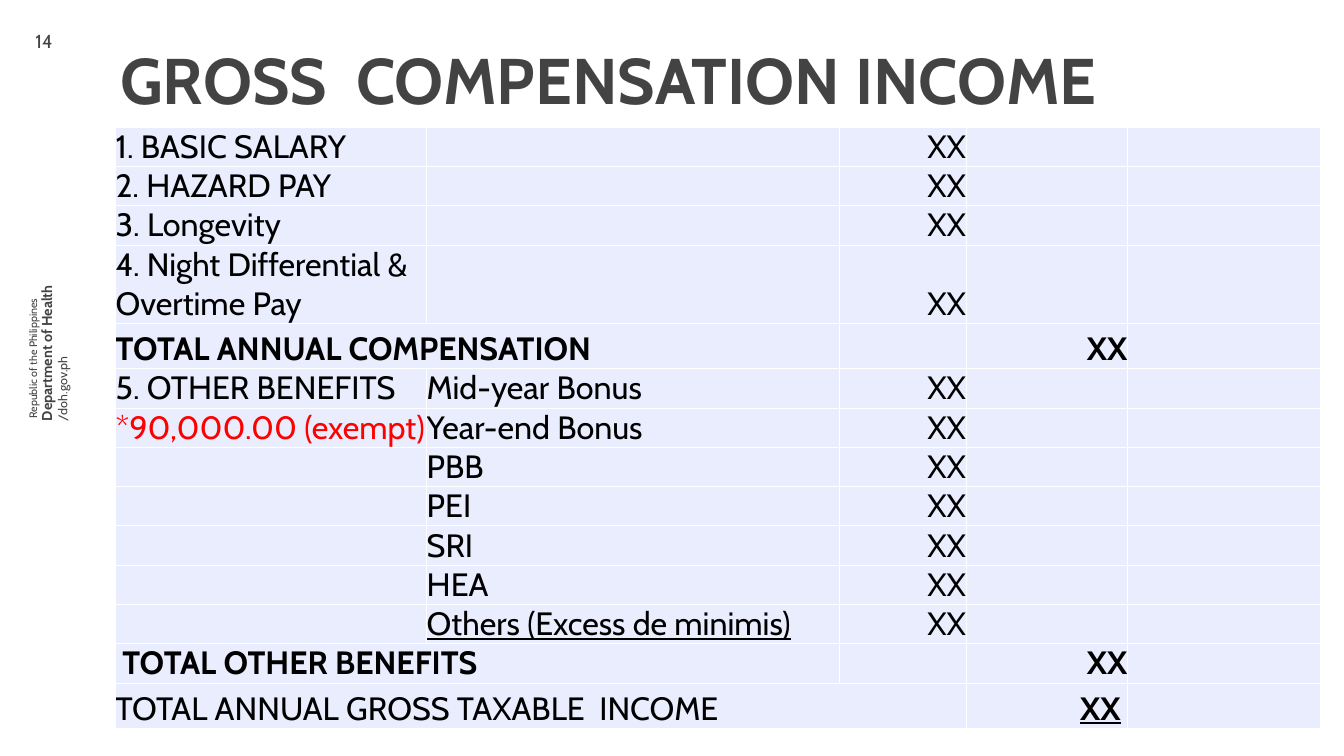
import dataclasses

import pptx
import pptx.dml.color
import pptx.enum.text
import pptx.oxml
import pptx.oxml.ns
import pptx.util

ALIGN = pptx.enum.text.PP_ALIGN
ANCHOR = pptx.enum.text.MSO_ANCHOR
SLIDE_WIDTH = pptx.util.Inches(20.83)
SLIDE_HEIGHT = pptx.util.Inches(11.72)


@dataclasses.dataclass(frozen=True)
class Theme:
    font: str = "Cabin"
    heading: str = "434343"
    body: str = "000000"
    exempt: str = "FF0000"
    cell: str = "E9EDFD"
    border: str = "FFFFFF"
    title_size: int = 72
    table_size: int = 36
    number_size: int = 21
    department_size: int = 16
    website_size: int = 14
    republic_size: int = 12


THEME = Theme()
COLUMN_SHARES = (23.15, 30.72, 9.41, 12, 14.35)
LINE_SHARE = 5.2
TOTAL_SHARE = 5.97
AMOUNT, TOTAL = 2, 3
SPACE_SHARE = 0.5
SALARY_ITEMS = ("1. BASIC SALARY", "2. HAZARD PAY", "3. Longevity",
                "4. Night Differential & Overtime Pay")
BENEFITS = ("Mid-year Bonus", "Year-end Bonus", "PBB", "PEI", "SRI", "HEA",
            "Others (Excess de minimis)")
FIRST_BENEFIT = len(SALARY_ITEMS) + 1
BENEFITS_TOTAL = FIRST_BENEFIT + len(BENEFITS)
GROSS_TOTAL = BENEFITS_TOTAL + 1


def across(percent):
    return int(SLIDE_WIDTH * percent / 100)


def down(percent):
    return int(SLIDE_HEIGHT * percent / 100)


def add_run(paragraph, text, size, color, bold=False, underline=False):
    run = paragraph.add_run()
    run.text = text
    run.font.name = THEME.font
    run.font.size = pptx.util.Pt(size)
    run.font.bold = bold
    run.font.underline = underline
    run.font.color.rgb = pptx.dml.color.RGBColor.from_string(color)


def add_text(slide, place, text, size, inset, bold=False, align=ALIGN.LEFT,
             anchor=ANCHOR.TOP, rotation=0, line_spacing=None):
    """Add a text box; place is left, top, width, height in percent of the slide."""
    left, top, width, height = place
    box = slide.shapes.add_textbox(across(left), down(top), across(width), down(height))
    box.rotation = rotation
    frame = box.text_frame
    frame.word_wrap = True
    frame.vertical_anchor = anchor
    frame.margin_left = frame.margin_right = across(inset)
    frame.margin_top = frame.margin_bottom = across(inset)
    paragraph = frame.paragraphs[0]
    paragraph.alignment = align
    if line_spacing:
        paragraph.line_spacing = line_spacing
    add_run(paragraph, text, size, THEME.heading, bold)


def style_cell(cell):
    cell.margin_left = cell.margin_right = cell.margin_top = cell.margin_bottom = 0
    cell.vertical_anchor = ANCHOR.BOTTOM
    properties = cell._tc.get_or_add_tcPr()
    for side in ("lnL", "lnR", "lnT", "lnB"):
        properties.append(pptx.oxml.parse_xml(
            f'<a:{side} {pptx.oxml.ns.nsdecls("a")} w="{pptx.util.Pt(1)}"><a:solidFill>'
            f'<a:srgbClr val="{THEME.border}"/></a:solidFill></a:{side}>'))
    cell.fill.solid()
    cell.fill.fore_color.rgb = pptx.dml.color.RGBColor.from_string(THEME.cell)


def write_label(cell, text, color=THEME.body, bold=False, underline=False):
    add_run(cell.text_frame.paragraphs[0], text, THEME.table_size, color, bold, underline)


def write_amount(cell, bold=False, underline=False):
    cell.text_frame.paragraphs[0].alignment = ALIGN.RIGHT
    write_label(cell, "XX", bold=bold, underline=underline)


def write_total(table, row, text, last_column, bold=True, underline=False):
    """Merge the label cells up to last_column and write the total beside them."""
    label = table.cell(row, 0)
    label.merge(table.cell(row, last_column))
    write_label(label, text, bold=bold)
    write_amount(table.cell(row, TOTAL), bold=True, underline=underline)


def add_income_table(slide):
    row_shares = [LINE_SHARE] * (GROSS_TOTAL + 1)
    row_shares[len(SALARY_ITEMS) - 1] = 2 * LINE_SHARE
    row_shares[FIRST_BENEFIT - 1] = row_shares[GROSS_TOTAL] = TOTAL_SHARE
    table = slide.shapes.add_table(
        len(row_shares), len(COLUMN_SHARES), across(8.6), down(16.81),
        across(sum(COLUMN_SHARES)), down(sum(row_shares))).table
    table.first_row = table.horz_banding = False
    for column, share in zip(table.columns, COLUMN_SHARES):
        column.width = across(share)
    for row, share in zip(table.rows, row_shares):
        row.height = down(share)
        for cell in row.cells:
            style_cell(cell)

    for row, item in enumerate(SALARY_ITEMS):
        write_label(table.cell(row, 0), item)
        write_amount(table.cell(row, AMOUNT))
    write_total(table, FIRST_BENEFIT - 1, "TOTAL ANNUAL COMPENSATION", 1)

    write_label(table.cell(FIRST_BENEFIT, 0), "5. OTHER BENEFITS")
    write_label(table.cell(FIRST_BENEFIT + 1, 0), "*90,000.00 (exempt)", THEME.exempt)
    for row, benefit in enumerate(BENEFITS, FIRST_BENEFIT):
        write_label(table.cell(row, 1), benefit, underline=benefit == BENEFITS[-1])
        write_amount(table.cell(row, AMOUNT))
    write_total(table, BENEFITS_TOTAL, "TOTAL OTHER BENEFITS", 1)
    table.cell(BENEFITS_TOTAL, 0).margin_left = across(SPACE_SHARE)
    write_total(table, GROSS_TOTAL, "TOTAL ANNUAL GROSS TAXABLE  INCOME", 2,
                bold=False, underline=True)
    table.cell(GROSS_TOTAL, TOTAL).margin_right = across(SPACE_SHARE)


def add_side_label(slide, left, top, height, text, size, bold=False, align=ALIGN.CENTER):
    add_text(slide, (left, top, 13.63, height), text, size, 0.48, bold, align, rotation=270)


def main():
    presentation = pptx.Presentation()
    presentation.slide_width = SLIDE_WIDTH
    presentation.slide_height = SLIDE_HEIGHT
    slide = presentation.slides.add_slide(presentation.slide_layouts[6])
    add_side_label(slide, -3.36, 44.71, 4.01, "Department of Health",
                   THEME.department_size, bold=True)
    add_side_label(slide, -2.16, 42.58, 3.75, "/doh.gov.ph",
                   THEME.website_size, align=ALIGN.LEFT)
    add_side_label(slide, -4.37, 45.73, 3.41, "Republic of the Philippines",
                   THEME.republic_size)
    add_text(slide, (1.63, 1.62, 3.6, 7.68), "14", THEME.number_size, 1.01,
             anchor=ANCHOR.MIDDLE)
    add_text(slide, (7.92, 5.46, 91.02, 11.86), "GROSS  COMPENSATION INCOME",
             THEME.title_size, 1.01, bold=True, line_spacing=0.8)
    add_income_table(slide)
    presentation.save("out.pptx")


if __name__ == "__main__":
    main()
